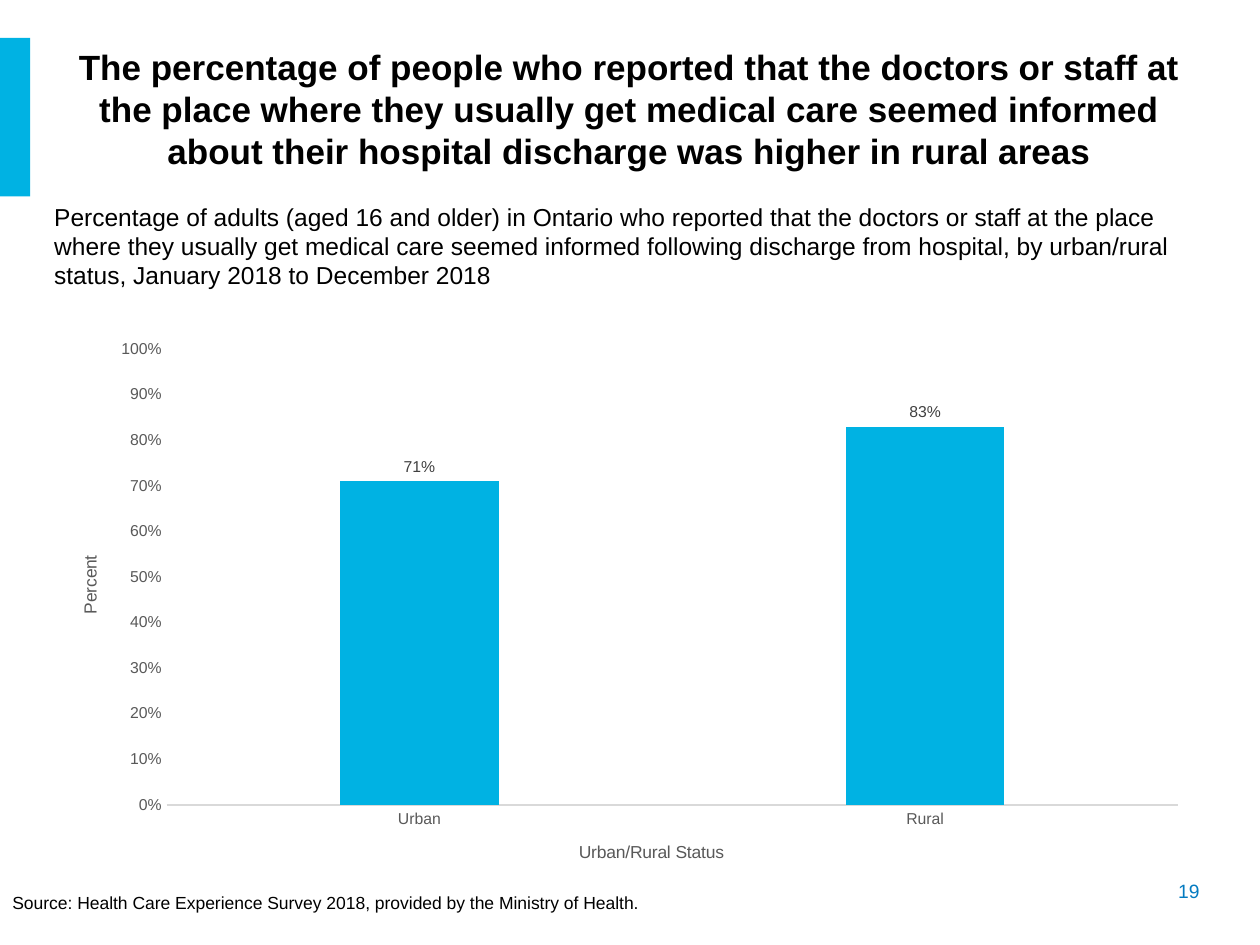
import pptx
import pptx.chart.data
import pptx.dml.color
import pptx.enum.chart
import pptx.enum.dml
import pptx.enum.shapes
import pptx.enum.text
import pptx.oxml
import pptx.oxml.ns
import pptx.util
from lxml import etree

COLOURS = {
    "accent": "00B2E3", "number": "047BC1", "text": "000000", "paper": "FFFFFF",
    "axis": "595959", "label": "404040", "rule": "D9D9D9",
}
WIDTH, HEIGHT = 10, 7.5
ALIGN = pptx.enum.text.PP_ALIGN
ANCHOR = pptx.enum.text.MSO_ANCHOR
TICK = pptx.enum.chart.XL_TICK_MARK


def colour(name):
    return pptx.dml.color.RGBColor.from_string(COLOURS[name])


def assign(target, values):
    for name, value in values.items():
        setattr(target, name, value)


class SlideBuilder:
    """Holds the style and the current page; places are shares of the page."""

    font_name = "Arial"

    def __init__(self, deck):
        self.deck = deck
        self.page = deck.slides.add_slide(deck.slide_layouts[1])

    def area(self, left, top, width, height):
        return [pptx.util.Inches(round(length, 2)) for length in
                (left * WIDTH, top * HEIGHT, width * WIDTH, height * HEIGHT)]

    def style(self, font, size, ink, bold=False):
        assign(font, {"name": self.font_name, "size": pptx.util.Pt(size), "bold": bold})
        font.color.rgb = colour(ink)

    def fill_text(self, box, place, text, size, ink="text", bold=False,
                  align=ALIGN.LEFT, anchor=ANCHOR.TOP):
        assign(box, dict(zip(("left", "top", "width", "height"), self.area(*place))))
        assign(box.text_frame, {
            "word_wrap": True, "vertical_anchor": anchor,
            "auto_size": pptx.enum.text.MSO_AUTO_SIZE.NONE,
        })
        para = box.text_frame.paragraphs[0]
        assign(para, {"alignment": align, "space_before": pptx.util.Pt(0)})
        span = para.add_run()
        span.text = text
        self.style(span.font, size, ink, bold)
        return para

    def title(self, place, text):
        box = self.page.shapes.title
        self.fill_text(box, place, text, 20, bold=True,
                       align=ALIGN.CENTER, anchor=ANCHOR.MIDDLE)
        box.line.color.rgb = colour("paper")
        assign(box.line, {"width": pptx.util.Pt(2.5),
                          "dash_style": pptx.enum.dml.MSO_LINE.ROUND_DOT})

    def body(self, place, text):
        para = self.fill_text(self.page.placeholders[1], place, text, 14)
        properties = para._p.get_or_add_pPr()
        properties.set("marL", "0")
        properties.set("indent", "0")
        etree.SubElement(properties, pptx.oxml.ns.qn("a:buNone"))

    def note(self, place, text, size, **format_values):
        box = self.page.shapes.add_textbox(*self.area(*place))
        self.fill_text(box, place, text, size, **format_values)

    def bar(self, place, fill):
        shape = self.page.shapes.add_shape(
            pptx.enum.shapes.MSO_SHAPE.RECTANGLE, *self.area(*place))
        shape.shadow.inherit = False
        shape.fill.solid()
        shape.fill.fore_color.rgb = colour(fill)
        shape.line.fill.background()

    def place_part(self, element, **values):
        """Gives a chart part a fixed place, in shares of the chart."""
        qn = pptx.oxml.ns.qn
        layout = element.find(qn("c:layout"))
        if layout is None:
            layout = pptx.oxml.parse_xml(
                f"<c:layout {pptx.oxml.ns.nsdecls('c')}/>")
            element.insert(0, layout)
        manual = etree.SubElement(layout, qn("c:manualLayout"))
        for name, value in values.items():
            etree.SubElement(manual, qn(f"c:{name}")).set("val", str(value))

    def axis(self, axis, heading, x, y):
        assign(axis, {"major_tick_mark": TICK.NONE, "minor_tick_mark": TICK.NONE,
                      "has_major_gridlines": False})
        self.style(axis.tick_labels.font, 9, "axis")
        span = axis.axis_title.text_frame.paragraphs[0].add_run()
        span.text = heading
        self.style(span.font, 10, "axis")
        self.place_part(axis.axis_title._element, xMode="edge", yMode="edge", x=x, y=y)

    def column_chart(self, place, categories, values, category_heading, value_heading):
        data = pptx.chart.data.CategoryChartData(number_format="0%")
        data.categories = categories
        data.add_series("Series 1", values)
        chart = self.page.shapes.add_chart(
            pptx.enum.chart.XL_CHART_TYPE.COLUMN_CLUSTERED, *self.area(*place), data).chart
        assign(chart, {"has_legend": False, "has_title": False})
        self.style(chart.font, 10, "text")
        self.place_part(chart._chartSpace.chart.plotArea, layoutTarget="inner",
                        xMode="edge", yMode="edge", x=0.09, y=0.06, w=0.89, h=0.83)

        # Axes
        self.axis(chart.category_axis, category_heading, 0.45, 0.95)
        line = chart.category_axis.format.line
        line.color.rgb = colour("rule")
        line.width = pptx.util.Pt(0.75)
        self.axis(chart.value_axis, value_heading, 0.01, 0.43)
        assign(chart.value_axis, {"minimum_scale": 0, "maximum_scale": 1, "major_unit": 0.1})
        assign(chart.value_axis.tick_labels,
               {"number_format": "0%", "number_format_is_linked": False})
        chart.value_axis.format.line.fill.background()

        # Columns and their labels
        plot = chart.plots[0]
        assign(plot, {"gap_width": 219, "overlap": -27, "vary_by_categories": False})
        series = plot.series[0]
        series.format.fill.solid()
        series.format.fill.fore_color.rgb = colour("accent")
        labels = series.data_labels
        assign(labels, {"show_value": True, "number_format": "0%",
                        "number_format_is_linked": False,
                        "position": pptx.enum.chart.XL_LABEL_POSITION.OUTSIDE_END})
        self.style(labels.font, 9, "label")


def main():
    deck = pptx.Presentation()
    assign(deck, {"slide_width": pptx.util.Inches(WIDTH),
                  "slide_height": pptx.util.Inches(HEIGHT)})
    builder = SlideBuilder(deck)

    # Heading
    builder.bar((0, 0.04, 0.024, 0.168), "accent")
    builder.title((0.033, 0.041, 0.933, 0.148),
                  "The percentage of people who reported that the doctors or staff at the place "
                  "where they usually get medical care seemed informed about their hospital "
                  "discharge was higher in rural areas")
    builder.body((0.033, 0.207, 0.919, 0.108),
                 "Percentage of adults (aged 16 and older) in Ontario who reported that the "
                 "doctors or staff at the place where they usually get medical care seemed "
                 "informed following discharge from hospital, by urban/rural status, "
                 "January 2018 to December 2018")

    # Chart
    builder.column_chart((0.051, 0.335, 0.902, 0.584), ["Urban", "Rural"], [0.71, 0.83],
                         "Urban/Rural Status", "Percent")

    # Footer
    builder.note((0, 0.937, 0.89, 0.036),
                 "Source: Health Care Experience Survey 2018, provided by the Ministry of Health.",
                 10)
    builder.note((0.845, 0.924, 0.117, 0.039), "19", 11, ink="number", align=ALIGN.RIGHT)
    deck.save("out.pptx")


if __name__ == "__main__":
    main()
